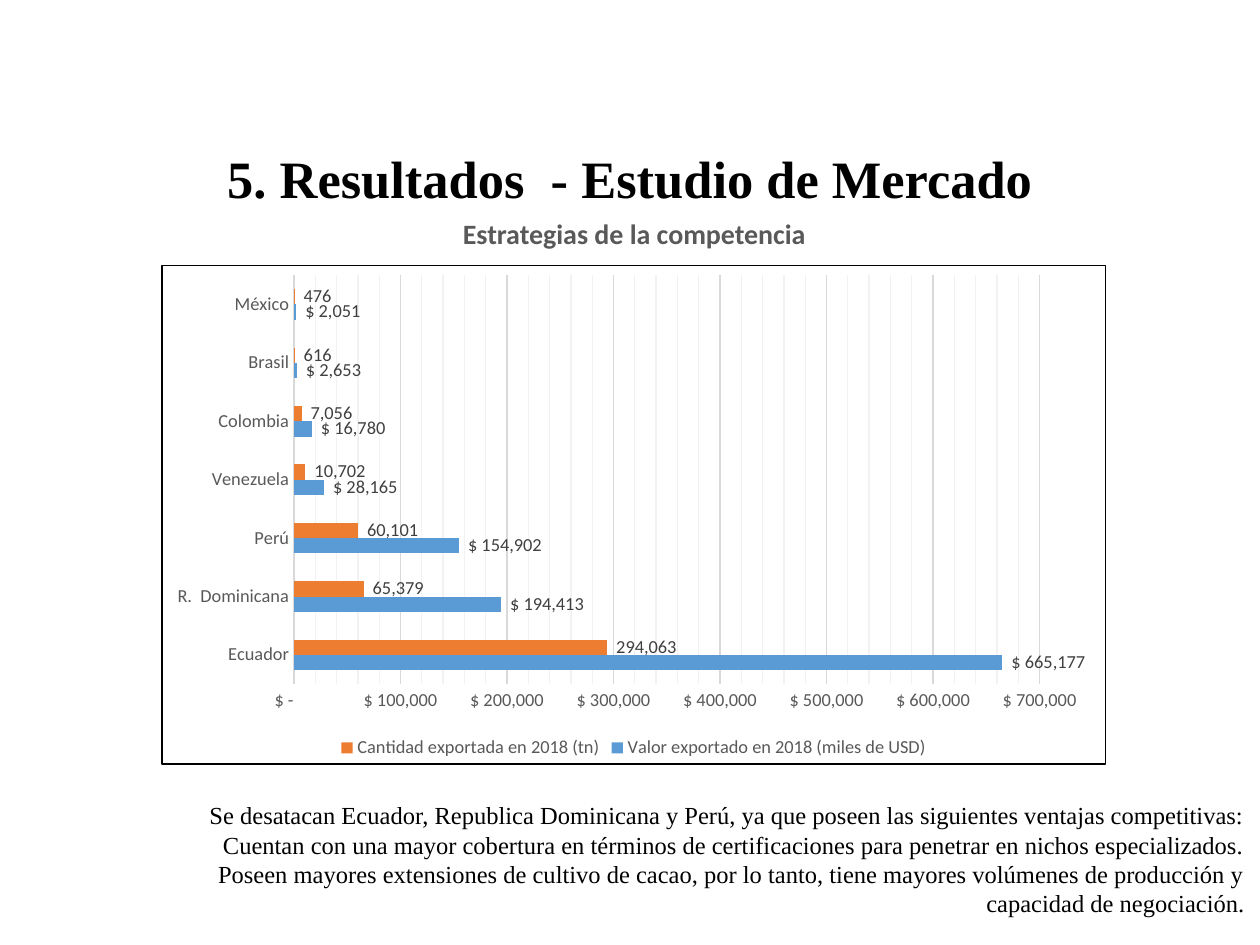
from lxml.etree import SubElement
from pptx import Presentation
from pptx.chart.data import CategoryChartData
from pptx.dml.color import RGBColor
from pptx.enum.chart import XL_CHART_TYPE as ChartType, XL_LABEL_POSITION as LabelPos
from pptx.enum.chart import XL_LEGEND_POSITION as LegendPos, XL_TICK_MARK as TickMark
from pptx.enum.text import MSO_ANCHOR as Anchor, MSO_AUTO_SIZE as AutoSize, PP_ALIGN as Align
from pptx.oxml import parse_xml
from pptx.oxml.ns import nsdecls, qn
from pptx.util import Inches, Pt

THEME = {
    "title": {"name": "Times New Roman", "size": Pt(30), "bold": True, "color": "000000"},
    "subtitle": {"name": "Calibri", "size": Pt(16), "bold": True, "color": "595959"},
    "body": {"name": "Times New Roman", "size": Pt(14), "bold": False, "color": "000000"},
    "chart": {"name": "Calibri", "size": Pt(10.5), "bold": False, "color": "595959"},
    "label": {"name": "Calibri", "size": Pt(10.5), "bold": False, "color": "404040"},
    "major_grid": "D9D9D9",
    "minor_grid": "F2F2F2",
    "border": "000000",
}
USD = r'_("$"\ * #,##0_);_("$"\ * \(#,##0\);_("$"\ * "-"??_);_(@_)'
TONS = r'_(* #,##0_);_(* \(#,##0\);_(* "-"??_);_(@_)'
COUNTRIES = ["Ecuador", "R.  Dominicana", "Perú", "Venezuela", "Colombia", "Brasil", "México"]
EXPORTS = [
    ("Valor exportado en 2018 (miles de USD)", "5B9BD5", USD,
     [665177, 194413, 154902, 28165, 16780, 2653, 2051]),
    ("Cantidad exportada en 2018 (tn)", "ED7D31", TONS,
     [294063, 65379, 60101, 10702, 7056, 616, 476]),
]
ADVANTAGES = [
    "Se desatacan Ecuador, Republica Dominicana y Perú, ya que poseen las siguientes ventajas competitivas:",
    "Cuentan con una mayor cobertura en términos de certificaciones para penetrar en nichos especializados.",
    "Poseen mayores extensiones de cultivo de cacao, por lo tanto, tiene mayores volúmenes de producción y "
    "capacidad de negociación.",
]


def style_font(font, role):
    for key, value in THEME[role].items():
        if key == "color":
            font.color.rgb = RGBColor.from_string(value)
        else:
            setattr(font, key, value)


def outline(color, fill=""):
    """Return chart shape properties with a thin line of the given colour."""
    return parse_xml(
        f"<c:spPr {nsdecls('c', 'a')}>{fill}<a:ln w='{int(Pt(0.75))}'><a:solidFill>"
        f"<a:srgbClr val='{color}'/></a:solidFill></a:ln></c:spPr>")


deck = Presentation()
deck.slide_width, deck.slide_height = Inches(10), Inches(7.5)
slide = deck.slides.add_slide(deck.slide_layouts[1])
title, body = slide.placeholders

# Text blocks
subtitle = slide.shapes.add_textbox(0, 0, 0, 0)
blocks = [
    (title, "title", ["5. Resultados  - Estudio de Mercado"], Align.CENTER, Anchor.MIDDLE,
     (0.75, 0.96, 8.5, 0.9)),
    (subtitle, "subtitle", ["Estrategias de la competencia"], Align.CENTER, Anchor.TOP,
     (3.56, 1.67, 2.95, 0.37)),
    (body, "body", ADVANTAGES, Align.RIGHT, Anchor.TOP, (1.28, 6.3, 8.7, 1.04)),
]
for block, role, lines, align, anchor, bounds in blocks:
    for side, inches in zip(("left", "top", "width", "height"), bounds):
        setattr(block, side, Inches(inches))
    frame = block.text_frame
    frame.text = "\n".join(lines)
    frame.auto_size = AutoSize.NONE
    frame.word_wrap = block is not subtitle
    frame.vertical_anchor = anchor
    for paragraph in frame.paragraphs:
        paragraph.alignment = align
        paragraph.space_before = Pt(0)
        if block is body:
            properties = paragraph._p.get_or_add_pPr()
            properties.set("marL", "0")
            properties.set("indent", "0")
            SubElement(properties, qn("a:buNone"))
        for run in paragraph.runs:
            style_font(run.font, role)

# Exports by country
exports = CategoryChartData()
exports.categories = COUNTRIES
for name, color, number_format, values in EXPORTS:
    exports.add_series(name, values, number_format)
chart = slide.shapes.add_chart(
    ChartType.BAR_CLUSTERED, Inches(1.28), Inches(2.1), Inches(7.5), Inches(3.97), exports).chart
chart.has_title = False
style_font(chart.font, "chart")
chart.has_legend = True
chart.legend.position = LegendPos.BOTTOM
chart.legend.include_in_layout = False
style_font(chart.legend.font, "chart")

bars = chart.plots[0]
for key, value in {"gap_width": 182, "overlap": 0, "vary_by_categories": False}.items():
    setattr(bars, key, value)
for series, (name, color, number_format, values) in zip(bars.series, EXPORTS):
    series.format.fill.solid()
    series.format.fill.fore_color.rgb = RGBColor.from_string(color)
    labels = series.data_labels
    for key, value in {"show_value": True, "number_format": number_format,
                       "number_format_is_linked": False, "position": LabelPos.OUTSIDE_END}.items():
        setattr(labels, key, value)
    style_font(labels.font, "label")

countries, amounts = chart.category_axis, chart.value_axis
for axis in (countries, amounts):
    axis.major_tick_mark = axis.minor_tick_mark = TickMark.NONE
    style_font(axis.tick_labels.font, "chart")
amounts.format.line.fill.background()
for key, value in {"minimum_scale": 0, "maximum_scale": 700000, "major_unit": 100000,
                   "minor_unit": 20000, "has_major_gridlines": True,
                   "has_minor_gridlines": True}.items():
    setattr(amounts, key, value)
for line in (countries.format.line, amounts.major_gridlines.format.line):
    line.color.rgb = RGBColor.from_string(THEME["major_grid"])
    line.width = Pt(0.75)
amounts._element.find(qn("c:minorGridlines")).append(outline(THEME["minor_grid"]))
amounts.tick_labels.number_format = USD
amounts.tick_labels.number_format_is_linked = False

# Plot area as shares of the chart, and the chart's frame
chart_xml = chart._chartSpace.find(qn("c:chart"))
plot_area = chart_xml.find(qn("c:plotArea"))
for old_layout in plot_area.findall(qn("c:layout")):
    plot_area.remove(old_layout)
shares = {"x": 0.14, "y": 0.02, "w": 0.79, "h": 0.82}
settings = {"layoutTarget": "inner", "xMode": "edge", "yMode": "edge", **shares}
layout = parse_xml(f"<c:layout {nsdecls('c')}><c:manualLayout/></c:layout>")
for key, value in settings.items():
    SubElement(layout[0], qn(f"c:{key}")).set("val", str(value))
plot_area.insert(0, layout)
chart_xml.addnext(outline(THEME["border"], "<a:noFill/>"))

deck.save("out.pptx")
